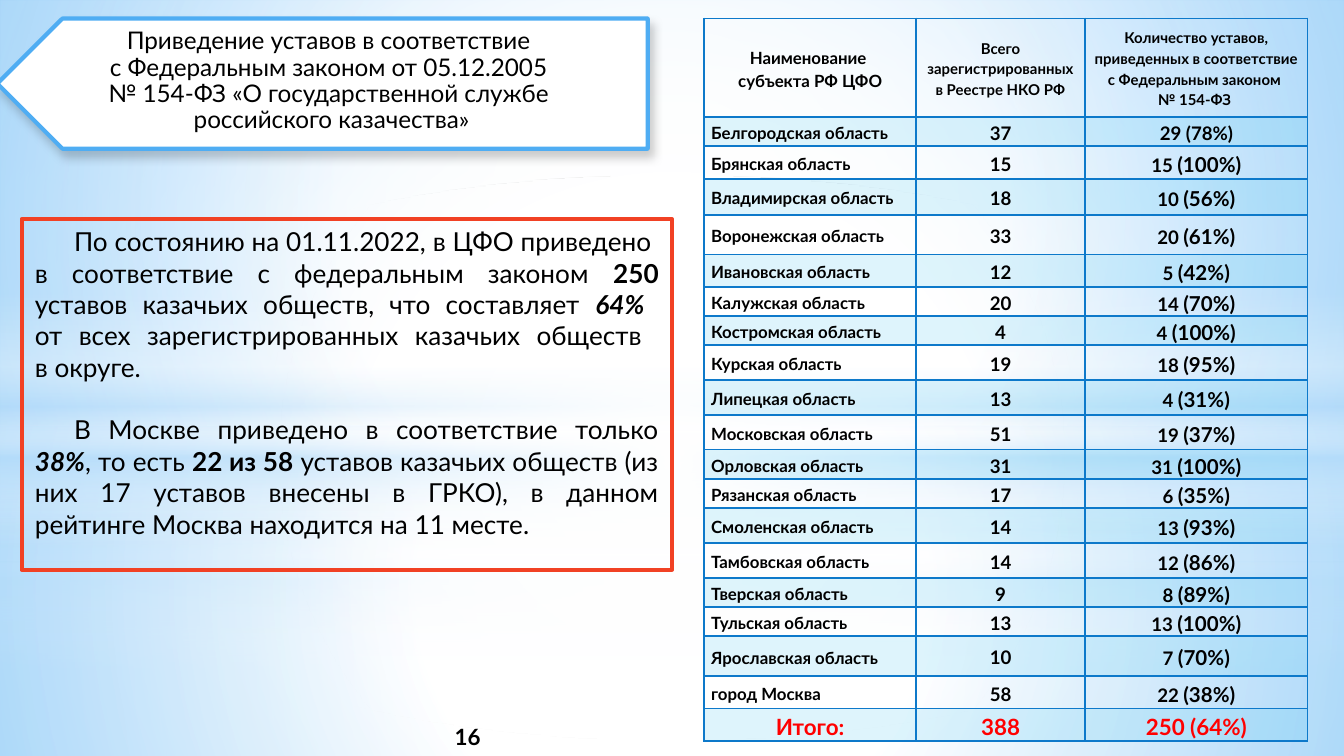
from pptx import Presentation
from pptx.dml.color import RGBColor
from pptx.enum.shapes import MSO_SHAPE as Preset
from pptx.enum.text import MSO_ANCHOR as Anchor, PP_ALIGN as Align
from pptx.oxml import parse_xml
from pptx.oxml.ns import nsdecls, qn
from pptx.util import Cm, Pt

WIDTH, HEIGHT = 25.4, 14.29
BORDER, BAND = "0D79CA", "5ECCF3"
WHITE, SKY = "FFFFFF", "B4DCFA"
COLUMNS = (4, 3.2, 4.2)
HEADER = (
    ("Наименование \nсубъекта РФ ЦФО", 9),
    ("Всего зарегистрированных в Реестре НКО РФ", 8),
    ("Количество уставов, приведенных в соответствие с Федеральным законом \n№ 154-ФЗ ", 8),
)
# Region, registered societies, charters brought into line, share, row height
REGIONS = (
    ("Белгородская область", 37, 29, 78, 0.55),
    ("Брянская область", 15, 15, 100, 0.62),
    ("Владимирская область", 18, 10, 56, 0.68),
    ("Воронежская область", 33, 20, 61, 0.75),
    ("Ивановская область", 12, 5, 42, 0.61),
    ("Калужская область", 20, 14, 70, 0.55),
    ("Костромская область", 4, 4, 100, 0.55),
    ("Курская область", 19, 18, 95, 0.66),
    ("Липецкая область", 13, 4, 31, 0.66),
    ("Московская область", 51, 19, 37, 0.66),
    ("Орловская область", 31, 31, 100, 0.55),
    ("Рязанская область", 17, 6, 35, 0.55),
    ("Смоленская область", 14, 13, 93, 0.66),
    ("Тамбовская область", 14, 12, 86, 0.66),
    ("Тверская область ", 9, 8, 89, 0.55),
    ("Тульская область", 13, 13, 100, 0.55),
    ("Ярославская область", 10, 7, 70, 0.76),
    ("город Москва", 58, 22, 38, 0.61),
)
TOTAL = ("Итого:", "388", "250 (64%)")


def rgb(value):
    return RGBColor.from_string(value)


def write(frame, paras, size=12, color="000000", bold=False, align=Align.CENTER,
          anchor=Anchor.TOP, spacing=None, gap=0, indent=0):
    """Each paragraph is a list of (text, format) spans; \n breaks the line."""
    frame.word_wrap = True
    frame.vertical_anchor = anchor
    for index, spans in enumerate(paras):
        para = frame.add_paragraph() if index else frame.paragraphs[0]
        para.alignment = align
        if spacing:
            para.line_spacing = spacing
        if index and gap:
            para.space_before = Pt(gap)
        if indent:
            para._p.get_or_add_pPr().set("indent", str(Cm(indent)))
        for text, style in spans:
            for number, line in enumerate(text.split("\n")):
                if number:
                    para.add_line_break()
                if line:
                    span = para.add_run()
                    span.text = line
                    font = span.font
                    font.name = "Lato"
                    font.size = Pt(style.get("size", size))
                    font.bold = style.get("bold", bold)
                    font.italic = style.get("italic", False)
                    font.color.rgb = rgb(color)


def fade(owner, fill, stops, focus=None):
    """Gradient of (position, colour, opacity): radial with a focus, else vertical."""
    fill.gradient()
    old = owner.find(".//" + qn("a:gradFill"))
    marks = "".join(
        f'<a:gs pos="{pos * 1000}"><a:srgbClr val="{color}">'
        f'<a:alpha val="{alpha * 1000}"/></a:srgbClr></a:gs>'
        for pos, color, alpha in stops)
    if focus:
        sides = " ".join(f'{side}="{part * 1000}"' for side, part in zip("ltrb", focus))
        shade = f'<a:path path="circle"><a:fillToRect {sides}/></a:path>'
    else:
        shade = '<a:lin ang="5400000" scaled="0"/>'
    old.getparent().replace(old, parse_xml(
        f'<a:gradFill {nsdecls("a")} rotWithShape="1"><a:gsLst>{marks}</a:gsLst>{shade}</a:gradFill>'))


def add_shape(page, preset, box, fill=None, line=None):
    shape = page.shapes.add_shape(preset, *(Cm(length) for length in box))
    shape.shadow.inherit = False
    if fill:
        shape.fill.solid()
        shape.fill.fore_color.rgb = rgb(fill)
    else:
        shape.fill.background()
    if line:
        shape.line.color.rgb = rgb(line)
        shape.line.width = Pt(2.25)
    else:
        shape.line.fill.background()
    return shape


def add_wash(page, split, band_top, glow):
    """Soft backdrop: two halves, a light band and a central glow."""
    centre = (50, 50, 50, 50)
    layers = (
        (Preset.RECTANGLE, (0, split, WIDTH, HEIGHT - split),
         ((0, WHITE, 91), (37, WHITE, 76), (100, SKY, 79)), centre),
        (Preset.RECTANGLE, (0, 0, WIDTH, split),
         ((0, WHITE, 89), (48, WHITE, 62), (100, SKY, 79)), centre),
        (Preset.RECTANGLE, (0, band_top, WIDTH, 4.78),
         ((0, WHITE, 0), (29, WHITE, 30), (45, SKY, 40),
          (55, WHITE, 26), (65, SKY, 60), (100, WHITE, 0)), None),
        (Preset.OVAL, (0, 3.33, WIDTH, 10.64),
         ((0, WHITE, 100), (glow, WHITE, 0)), centre),
    )
    for preset, box, stops, focus in layers:
        shape = add_shape(page, preset, box)
        fade(shape._element, shape.fill, stops, focus)


def add_title(page, box):
    left, top, width, height = box
    arrow = add_shape(page, Preset.PENTAGON, box, WHITE, "4FADF3")
    arrow.rotation = 180
    effects = arrow._element.spPr.find(qn("a:effectLst"))
    effects.append(parse_xml(
        f'<a:outerShdw {nsdecls("a")} blurRad="{Pt(5)}" dist="{Pt(4)}" dir="3600000" rotWithShape="0">'
        '<a:srgbClr val="000000"><a:alpha val="20000"/></a:srgbClr></a:outerShdw>'))
    label = page.shapes.add_textbox(Cm(left + 0.46), Cm(top + 0.07), Cm(width - 0.58), Cm(height + 0.49))
    text = ("Приведение уставов в соответствие \nс Федеральным законом от 05.12.2005 \n"
            "№ 154-ФЗ «О государственной службе \nроссийского казачества»")
    write(label.text_frame, [[(text, {})]], size=13, spacing=0.9)


def add_summary(page, box):
    strong, accent = {"bold": True}, {"bold": True, "italic": True}
    panel = add_shape(page, Preset.RECTANGLE, box, line="F14124")
    write(panel.text_frame, [
        [("По состоянию на 01.11.2022, в ЦФО приведено \nв соответствие с федеральным законом ", {}),
         ("250 ", strong), ("уставов казачьих обществ, что составляет ", {}), ("64% \n", accent),
         ("от всех зарегистрированных казачьих обществ \nв округе.", {})],
        [("В Москве приведено в соответствие только ", {}), ("38%", accent), (", то есть ", {}),
         ("22 из 58", strong),
         (" уставов казачьих обществ (из них 17 уставов внесены в ГРКО), "
          "в данном рейтинге Москва находится на 11 месте.", {})],
    ], size=14, align=Align.JUSTIFY, gap=16.8, indent=0.74)


def fill_cell(cell, paras, banded, margin, **style):
    cell.margin_left = cell.margin_right = Cm(margin)
    cell.margin_top = cell.margin_bottom = 0
    write(cell.text_frame, paras, bold=True, spacing=1.15, **style)
    cell.vertical_anchor = Anchor.MIDDLE
    props = cell._tc.get_or_add_tcPr()
    if banded:
        cell.fill.solid()
        cell.fill.fore_color.rgb = rgb(BAND)
        props.find(".//" + qn("a:srgbClr")).append(parse_xml(f'<a:alpha {nsdecls("a")} val="20000"/>'))
    else:
        cell.fill.background()
    for index, side in enumerate("LRTB"):
        props.insert(index, parse_xml(
            f'<a:ln{side} {nsdecls("a")} w="{Pt(1)}"><a:solidFill><a:srgbClr val="{BORDER}"/>'
            f'</a:solidFill></a:ln{side}>'))


def add_region_table(page, box):
    heights = [1.86, *(region[-1] for region in REGIONS), 0.62]
    frame = page.shapes.add_table(len(heights), len(COLUMNS), *(Cm(length) for length in box))
    table = frame.table
    table.first_row = table.horz_banding = False
    for column, width in zip(table.columns, COLUMNS):
        column.width = Cm(width)
    for row, height in zip(table.rows, heights):
        row.height = Cm(height)
    # Heading row
    for column, (text, size) in enumerate(HEADER):
        paras = [[(line, {})] for line in text.split("\n")]
        fill_cell(table.cell(0, column), paras, False, 0.13, size=size)
    # Regions
    for row, (name, total, done, share, _) in enumerate(REGIONS, 1):
        banded = row % 2 == 1
        share_size = 10 if row == 1 else 11
        fill_cell(table.cell(row, 0), [[(name, {})]], banded, 0.13, size=9, align=Align.JUSTIFY)
        fill_cell(table.cell(row, 1), [[(str(total), {})]], banded, 0.18, size=10)
        fill_cell(table.cell(row, 2), [[(f"{done} ", {}), (f"({share}%)", {"size": share_size})]],
                  banded, 0.18, size=10)
    # Totals
    for column, text in enumerate(TOTAL):
        fill_cell(table.cell(len(heights) - 1, column), [[(text, {})]], True, 0.18, color="FF0000")


def add_page_number(page, box):
    label = page.shapes.add_textbox(*(Cm(length) for length in box))
    write(label.text_frame, [[("16", {})]], bold=True, anchor=Anchor.MIDDLE)


def main():
    deck = Presentation()
    deck.slide_width, deck.slide_height = Cm(WIDTH), Cm(HEIGHT)
    page = deck.slides.add_slide(deck.slide_layouts[6])
    fade(page._element, page.background.fill,
         ((0, WHITE, 100), (42, WHITE, 100), (100, "008BF4", 100)), (24, 44, 24, 12))
    add_wash(page, 10.64, 7.85, 56)
    add_wash(page, 8.05, 5.54, 54)
    add_region_table(page, (13.31, 0.35, sum(COLUMNS), 13.7))
    add_summary(page, (0.41, 4.14, 12.29, 6.63))
    add_title(page, (-0.05, 0.35, 12.29, 2.46))
    add_page_number(page, (6.3, 13.54, 5.08, 0.76))
    deck.save("out.pptx")


if __name__ == "__main__":
    main()
